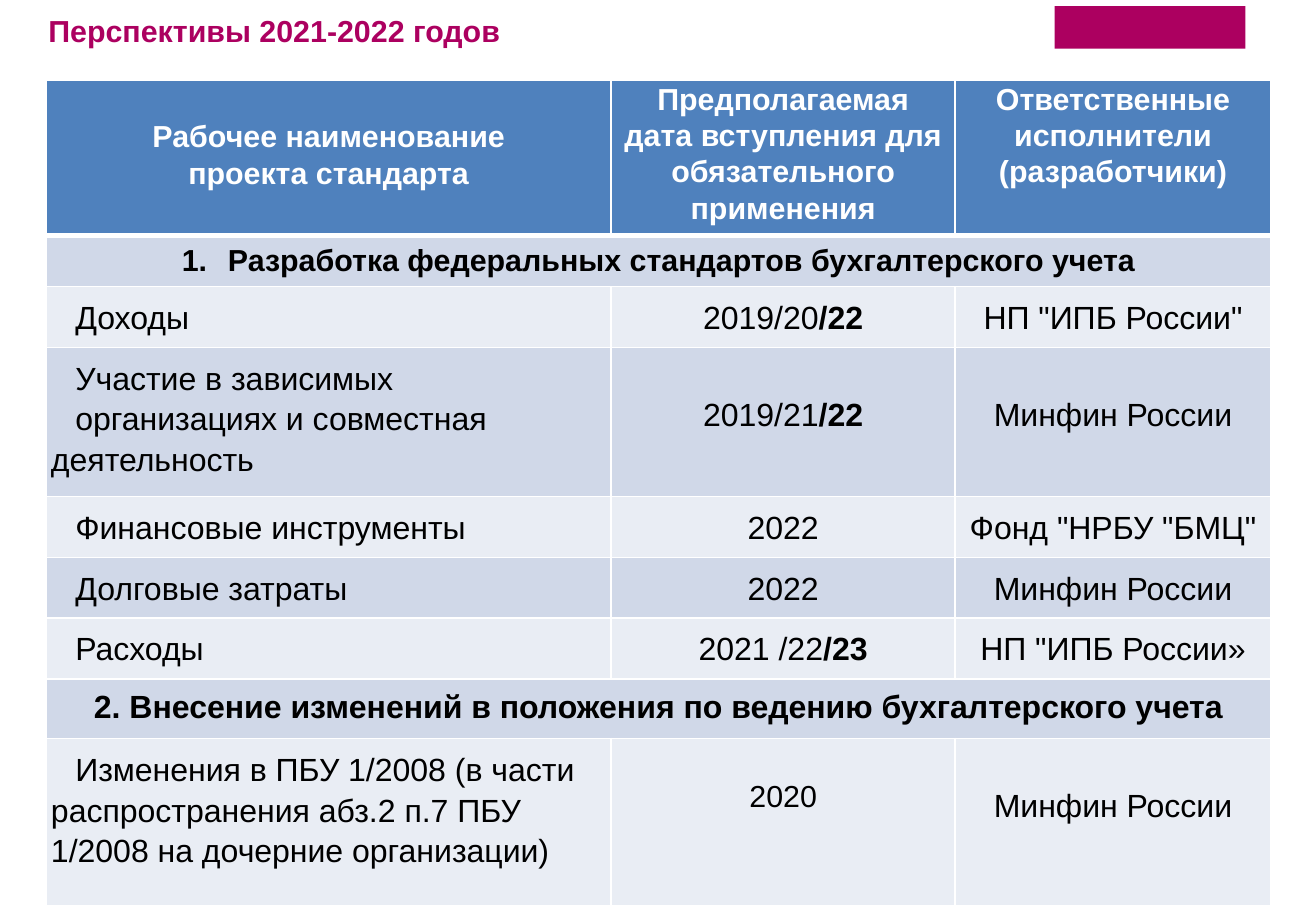
from lxml import etree
from pptx import Presentation
from pptx import util as u
from pptx.dml.color import RGBColor
from pptx.enum import shapes, text
from pptx.oxml.ns import qn

COLORS = {"brand": "AC0060", "header": "4F81BD", "dark": "D0D8E8",
          "light": "E9EDF4", "white": "FFFFFF", "black": "000000"}
COLUMNS = [4.65, 2.83, 2.6]
ROWS = [1.28, 0.42, 0.5, 1.23, 0.5, 0.5, 0.5, 0.49, 1.38]
MINISTRY = "Минфин России"

# "|" starts the bold part of a date, a line break starts a paragraph
CONTENT = [
    ["Рабочее наименование\nпроекта стандарта",
     "Предполагаемая дата вступления для обязательного применения",
     "Ответственные исполнители (разработчики)"],
    ["Разработка федеральных стандартов бухгалтерского учета"],
    ["Доходы", "2019/20|/22", 'НП "ИПБ России"'],
    ["Участие в зависимых\nорганизациях и совместная деятельность",
     "2019/21|/22", MINISTRY],
    ["Финансовые инструменты", "2022", 'Фонд "НРБУ "БМЦ"'],
    ["Долговые затраты", "2022", MINISTRY],
    ["Расходы", "2021 /22|/23", 'НП "ИПБ России»'],
    ["2. Внесение изменений в положения по ведению бухгалтерского учета"],
    ["Изменения в ПБУ 1/2008 (в части распространения абз.2 п.7 ПБУ 1/2008 "
     "на дочерние организации)", "2020", MINISTRY],
]
HEADER, FIRST_SECTION, SECOND_SECTION, LAST = 0, 1, 7, 8
SECTIONS = (FIRST_SECTION, SECOND_SECTION)
# Cells whose text starts lower than the usual top margin
LOWERED = {(0, 0): 0.31, (3, 1): 0.37, (3, 2): 0.37, (8, 1): 0.34, (8, 2): 0.37}


def style(font, size, color, bold):
    font.name = "Arial"
    font.size = u.Pt(size)
    font.bold = bold
    font.color.rgb = RGBColor.from_string(COLORS[color])


def add_borders(cell, widths):
    properties = cell._tc.get_or_add_tcPr()
    for position, (side, points) in enumerate(widths.items()):
        line = etree.Element(qn(f"a:ln{side}"), w=str(u.Pt(points)))
        fill = etree.SubElement(line, qn("a:solidFill"))
        etree.SubElement(fill, qn("a:srgbClr"), val=COLORS["white"])
        properties.insert(position, line)


deck = Presentation()
deck.slide_width, deck.slide_height = u.Inches(10.83), u.Inches(7.5)
page = deck.slides.add_slide(deck.slide_layouts[6])

# Plain block in the logo's place
block = page.shapes.add_shape(shapes.MSO_SHAPE.RECTANGLE, u.Inches(8.68),
                              u.Inches(0.05), u.Inches(1.57), u.Inches(0.35))
block.shadow.inherit = False
block.fill.solid()
block.fill.fore_color.rgb = RGBColor.from_string(COLORS["brand"])
block.line.fill.background()

# Table of planned standards
table = page.shapes.add_table(
    len(ROWS), len(COLUMNS), u.Inches(0.38), u.Inches(0.66),
    u.Inches(sum(COLUMNS)), u.Inches(sum(ROWS))).table
table.horz_banding = False
for column, width in zip(table.columns, COLUMNS):
    column.width = u.Inches(width)
for row, height in zip(table.rows, ROWS):
    row.height = u.Inches(height)
for section in SECTIONS:
    table.cell(section, 0).merge(table.cell(section, len(COLUMNS) - 1))

for r in range(len(ROWS)):
    for c in range(len(COLUMNS)):
        cell = table.cell(r, c)
        cell.fill.solid()
        shade = "header" if r == HEADER else "dark" if r % 2 else "light"
        cell.fill.fore_color.rgb = RGBColor.from_string(COLORS[shade])
        add_borders(cell, {"L": 1, "R": 1,
                           "T": 3 if r == FIRST_SECTION else 1,
                           "B": 3 if r == HEADER else 1})
        if cell.is_spanned:
            continue

        # Margins
        side, edge = {HEADER: (0.07, 0), FIRST_SECTION: (0.1, 0.05)}.get(r, (0.04, 0.07))
        cell.margin_left = cell.margin_right = u.Inches(side)
        cell.margin_top = u.Inches(LOWERED.get((r, c), edge))
        cell.margin_bottom = u.Inches(edge)

        # Text
        titled = r == HEADER or r in SECTIONS
        small = r in (HEADER, FIRST_SECTION) or (r, c) == (LAST, 1)
        cell.text_frame.text = CONTENT[r][c].replace("|", "")
        for para, words in zip(cell.text_frame.paragraphs, CONTENT[r][c].split("\n")):
            para.line_spacing = 1.07 if titled else 1.0 if small else 1.15
            if titled or c > 0:
                para.alignment = text.PP_ALIGN.CENTER
            else:
                para._p.get_or_add_pPr().set("indent", str(u.Inches(0.2)))
            if r in SECTIONS:
                para.space_after = u.Pt(3)
            if r == FIRST_SECTION:
                properties = para._p.get_or_add_pPr()
                properties.set("marL", str(u.Inches(0.38)))
                properties.set("indent", str(-u.Inches(0.38)))
                etree.SubElement(properties, qn("a:buFont"), typeface="+mj-lt")
                etree.SubElement(properties, qn("a:buAutoNum"), type="arabicPeriod")
            plain, _, strong = words.partition("|")
            para.runs[0].text = plain
            if strong:
                para.add_run().text = strong
            for number, span in enumerate(para.runs):
                style(span.font, 18 if small else 19,
                      "white" if r == HEADER else "black", titled or number == 1)

# Title
box = page.shapes.add_textbox(u.Inches(0.3), u.Inches(0.05), u.Inches(3.96), u.Inches(0.4))
box.text_frame.word_wrap = False
box.text_frame.text = "Перспективы 2021-2022 годов"
style(box.text_frame.paragraphs[0].runs[0].font, 18, "brand", True)

deck.save("out.pptx")
